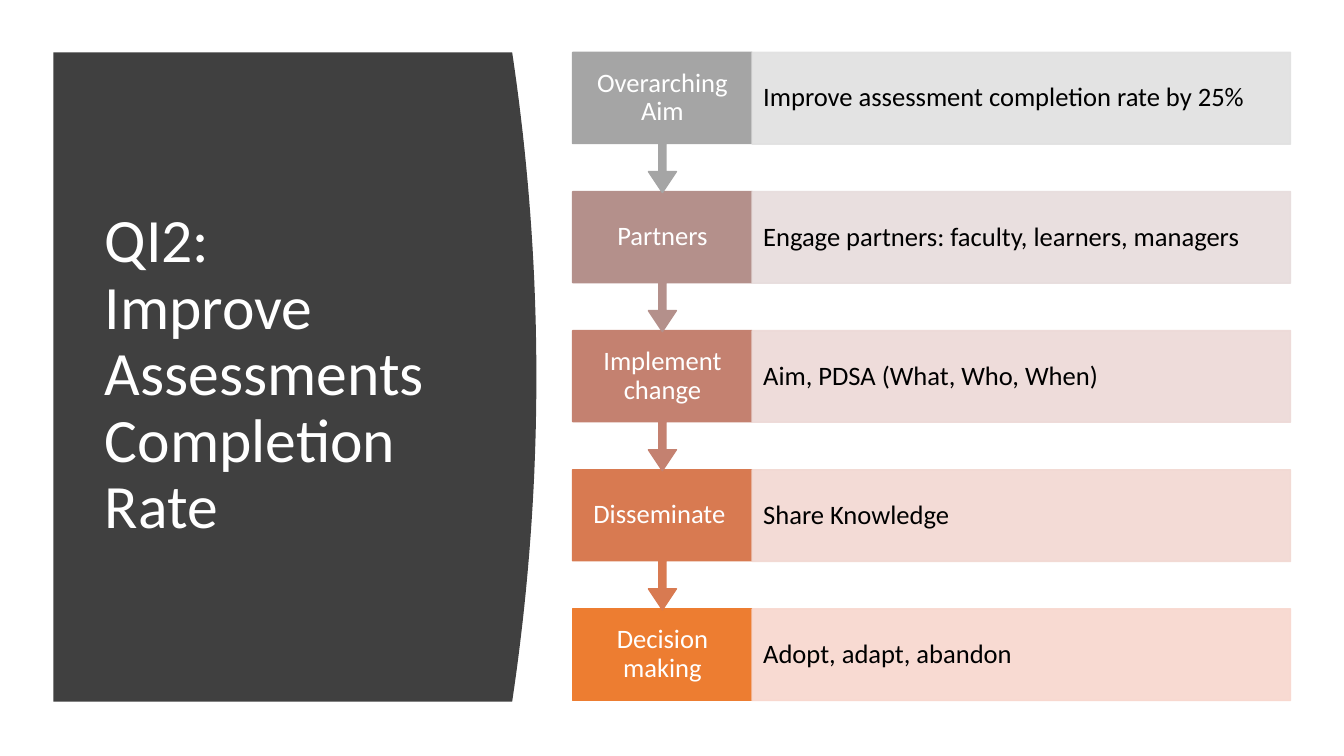
from typing import NamedTuple

from lxml.etree import SubElement
from pptx import Presentation
from pptx.dml.color import RGBColor
from pptx.enum.shapes import MSO_SHAPE as Preset
from pptx.enum.text import MSO_ANCHOR as Anchor, PP_ALIGN as Align
from pptx.oxml.ns import qn
from pptx.util import Inches, Pt

WHITE = RGBColor(0xFF, 0xFF, 0xFF)
BLACK = RGBColor(0x00, 0x00, 0x00)
DARK = RGBColor(0x40, 0x40, 0x40)
FONT = "Calibri"

# Layout in inches
TOP, PITCH, HIGH = 0.52, 1.38, 0.91
HEAD_X, HEAD_W = 5.68, 1.78
BAR_X, BAR_W = 7.46, 5.34
STEM_H = 1.39
LEFT, EDGE, BULGE, TALL = 0.53, 5.08, 0.24, 6.44


class Step(NamedTuple):
    head: str
    note: str
    tone: RGBColor
    tint: RGBColor


STEPS = [
    Step("Overarching Aim", "Improve assessment completion rate by 25%",
         RGBColor(0xA5, 0xA5, 0xA5), RGBColor(0xE1, 0xE1, 0xE1)),
    Step("Partners", "Engage partners: faculty, learners, managers",
         RGBColor(0xB4, 0x90, 0x8B), RGBColor(0xE7, 0xDC, 0xDC)),
    Step("Implement change", "Aim, PDSA (What, Who, When)",
         RGBColor(0xC4, 0x81, 0x70), RGBColor(0xED, 0xD9, 0xD7)),
    Step("Disseminate ", "Share Knowledge",
         RGBColor(0xD8, 0x7A, 0x51), RGBColor(0xF2, 0xD8, 0xD2)),
    Step("Decision making", "Adopt, adapt, abandon",
         RGBColor(0xED, 0x7D, 0x31), RGBColor(0xF8, 0xD7, 0xCE)),
]


def write(shape, text: str, *, size: float = 19, color: RGBColor = WHITE,
          align: Align = Align.LEFT, pad: tuple[float, float] = (0.1, 0.05)) -> None:
    frame = shape.text_frame
    frame.word_wrap = True
    frame.vertical_anchor = Anchor.MIDDLE
    frame.margin_left = frame.margin_right = Inches(pad[0])
    frame.margin_top = frame.margin_bottom = Inches(pad[1])
    para = frame.paragraphs[0]
    para.text = text
    para.alignment = align
    para.line_spacing = 0.9
    for run in para.runs:
        run.font.name = FONT
        run.font.size = Pt(size)
        run.font.color.rgb = color


def paint(shape, color: RGBColor, alpha: int = 100) -> None:
    shape.shadow.inherit = False
    shape.fill.solid()
    shape.fill.fore_color.rgb = color
    shape.line.color.rgb = color
    shape.line.width = Pt(1)
    if alpha < 100:
        for tag in shape.element.spPr.iter(qn("a:srgbClr")):
            SubElement(tag, qn("a:alpha"), val=str(alpha * 1000))


def block(slide, kind: Preset, left: float, top: float, width: float, height: float):
    return slide.shapes.add_shape(
        kind, Inches(left), Inches(top), Inches(width), Inches(height))


def add_panel(slide):
    """Dark panel whose right side bows outward."""
    count = 40
    turns = [2 * i / count - 1 for i in range(count + 1)]
    curve = [(Inches(EDGE + BULGE * (1 - t * t)), Inches(TOP + TALL * (1 + t) / 2))
             for t in turns]
    build = slide.shapes.build_freeform(Inches(LEFT), Inches(TOP))
    build.add_line_segments(curve + [(Inches(LEFT), Inches(TOP + TALL))], close=True)
    panel = build.convert_to_shape()
    paint(panel, DARK)
    panel.line.fill.background()
    return panel


def add_step(slide, step: Step, top: float, last: bool) -> None:
    if last:
        head = block(slide, Preset.RECTANGLE, HEAD_X, top, HEAD_W, HIGH)
    else:
        head = block(slide, Preset.DOWN_ARROW_CALLOUT, HEAD_X, top, HEAD_W, STEM_H)
        for i, value in enumerate((0.05, 0.1, 0.15, 0.65)):
            head.adjustments[i] = value
    paint(head, step.tone)
    write(head, step.head, align=Align.CENTER, pad=(0.13, 0.15))

    bar = block(slide, Preset.RECTANGLE, BAR_X, top, BAR_W, HIGH)
    paint(bar, step.tint, alpha=90)
    write(bar, step.note, color=BLACK, pad=(0.11, 0.26))


def main() -> None:
    deck = Presentation()
    deck.slide_width, deck.slide_height = Inches(13.33), Inches(7.5)
    slide = deck.slides.add_slide(deck.slide_layouts[5])

    # Title on the panel
    title = slide.shapes.title
    title.left, title.top = Inches(0.94), Inches(1.11)
    title.width, title.height = Inches(3.74), Inches(5.24)
    write(title, "QI2:\nImprove Assessments\nCompletion Rate", size=44)
    title.element.addprevious(add_panel(slide).element)

    # Steps, lowest first so that each arrow lies over the next box
    final = len(STEPS) - 1
    for i in range(final, -1, -1):
        add_step(slide, STEPS[i], TOP + i * PITCH, i == final)

    deck.save("out.pptx")


if __name__ == "__main__":
    main()
